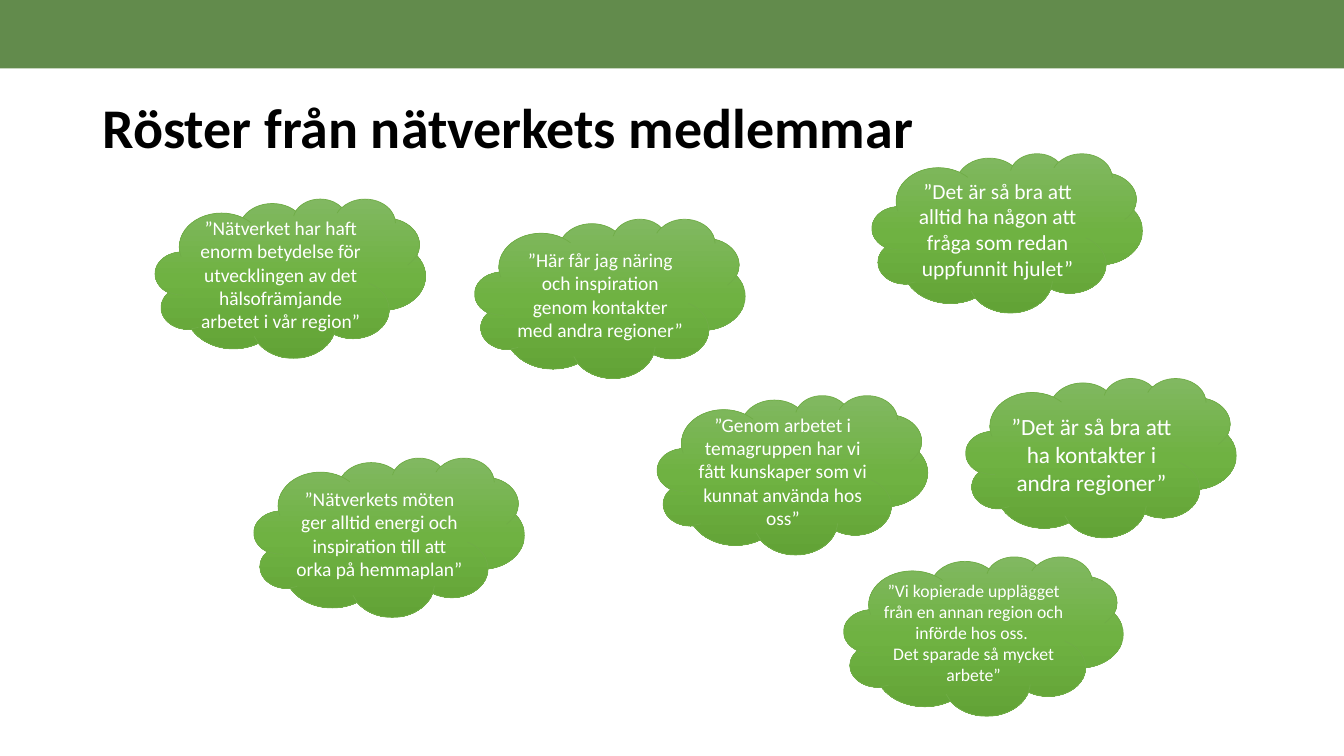
from copy import deepcopy
from dataclasses import dataclass

from lxml import etree
from pptx import Presentation
from pptx import util as u
from pptx.dml.color import RGBColor
from pptx.enum import shapes, text
from pptx.oxml.ns import qn


@dataclass(frozen=True)
class Theme:
    font: str = "Calibri"
    band: str = "44752A"
    band_opacity: int = 84
    title_color: str = "000000"
    title_size: float = 40
    quote_color: str = "FFFFFF"
    cloud_stops: tuple = ((0, "81B861"), (0.5, "6FB242"), (1, "62A336"))
    cloud_line: str = "70AD47"
    line_width: float = 0.5
    small: float = 12.6
    normal: float = 13.9
    large: float = 15.3
    largest: float = 16.6


THEME = Theme()
CLOUD_WIDTH, CLOUD_HEIGHT, INSET = 2.68, 1.58, 0.04

# left, top, type size, quote
QUOTES = [
    (1.54, 1.97, THEME.normal, "”Nätverket har haft enorm betydelse för utvecklingen "
     "av det hälsofrämjande arbetet i vår region”"),
    (8.65, 1.52, THEME.large, "”Det är så bra att alltid ha någon att fråga "
     "som redan uppfunnit hjulet”"),
    (2.52, 4.54, THEME.normal, "”Nätverkets möten ger alltid energi och inspiration "
     "till att orka på hemmaplan”"),
    (6.52, 3.92, THEME.normal, "”Genom arbetet i temagruppen har vi fått kunskaper "
     "som vi kunnat använda hos oss”"),
    (9.58, 3.75, THEME.largest, "”Det är så bra att ha kontakter i andra regioner”"),
    (4.71, 2.17, THEME.normal, "”Här får jag näring och inspiration genom kontakter "
     "med andra regioner”"),
]
COPIED_APPROACH = ("”Vi kopierade upplägget från en annan region och införde hos oss. \v"
                   "Det sparade så mycket arbete”")


def apply(target, formats):
    for attribute, value in formats.items():
        setattr(target, attribute, value)


class VoicesSlide:
    def __init__(self, presentation, theme):
        self.theme = theme
        self.slide = presentation.slides.add_slide(presentation.slide_layouts[6])

    def shape(self, kind, left, top, width, height):
        shape = self.slide.shapes.add_shape(kind, *map(u.Inches, (left, top, width, height)))
        shape.shadow.inherit = False
        return shape

    def set_words(self, shape, words, size, color, paragraph_formats, bold=False):
        frame = shape.text_frame
        apply(frame, {"word_wrap": True, "vertical_anchor": text.MSO_ANCHOR.MIDDLE})
        frame.text = words
        paragraph = frame.paragraphs[0]
        apply(paragraph, paragraph_formats)
        for run in paragraph.runs:
            apply(run.font, {"name": self.theme.font, "size": u.Pt(size), "bold": bold})
            run.font.color.rgb = RGBColor.from_string(color)

    def band(self, width, height):
        band = self.shape(shapes.MSO_SHAPE.RECTANGLE, 0, 0, width, height)
        band.fill.solid()
        band.fill.fore_color.rgb = RGBColor.from_string(self.theme.band)
        band.line.fill.background()
        color = band.element.spPr.find(qn("a:solidFill"))[0]
        etree.SubElement(color, qn("a:alpha"), val=str(self.theme.band_opacity * 1000))

    def title(self, words, left, top, width, height):
        box = self.slide.shapes.add_textbox(*map(u.Inches, (left, top, width, height)))
        self.set_words(box, words, self.theme.title_size, self.theme.title_color,
                       {"line_spacing": 0.9}, bold=True)

    def cloud(self, left, top, size, quote, width=CLOUD_WIDTH, side_inset=INSET):
        cloud = self.shape(shapes.MSO_SHAPE.CLOUD, left, top, width, CLOUD_HEIGHT)
        self.fill_cloud(cloud)
        cloud.line.color.rgb = RGBColor.from_string(self.theme.cloud_line)
        cloud.line.width = u.Pt(self.theme.line_width)
        side, end = u.Inches(side_inset), u.Inches(INSET)
        apply(cloud.text_frame, {"margin_left": side, "margin_right": side,
                                 "margin_top": end, "margin_bottom": end})
        self.set_words(cloud, quote, size, self.theme.quote_color,
                       {"alignment": text.PP_ALIGN.CENTER})

    def fill_cloud(self, cloud):
        """Shade from top to bottom; a new gradient has two stops, so one is added."""
        cloud.fill.gradient()
        cloud.fill.gradient_angle = 270
        stop_list = cloud.element.spPr.find(qn("a:gradFill")).find(qn("a:gsLst"))
        stop_list.append(deepcopy(stop_list[0]))
        for stop, (position, color) in zip(cloud.fill.gradient_stops, self.theme.cloud_stops):
            stop.position = position
            stop.color.rgb = RGBColor.from_string(color)


def main():
    presentation = Presentation()
    apply(presentation, {"slide_width": u.Inches(13.33), "slide_height": u.Inches(7.5)})
    voices = VoicesSlide(presentation, THEME)
    voices.band(13.33, 0.68)
    voices.title("Röster från nätverkets medlemmar", 0.92, 0.81, 11.5, 0.96)
    for quote in QUOTES:
        voices.cloud(*quote)
    voices.cloud(8.37, 5.52, THEME.small, COPIED_APPROACH, width=2.77, side_inset=0)
    presentation.save("out.pptx")


if __name__ == "__main__":
    main()
